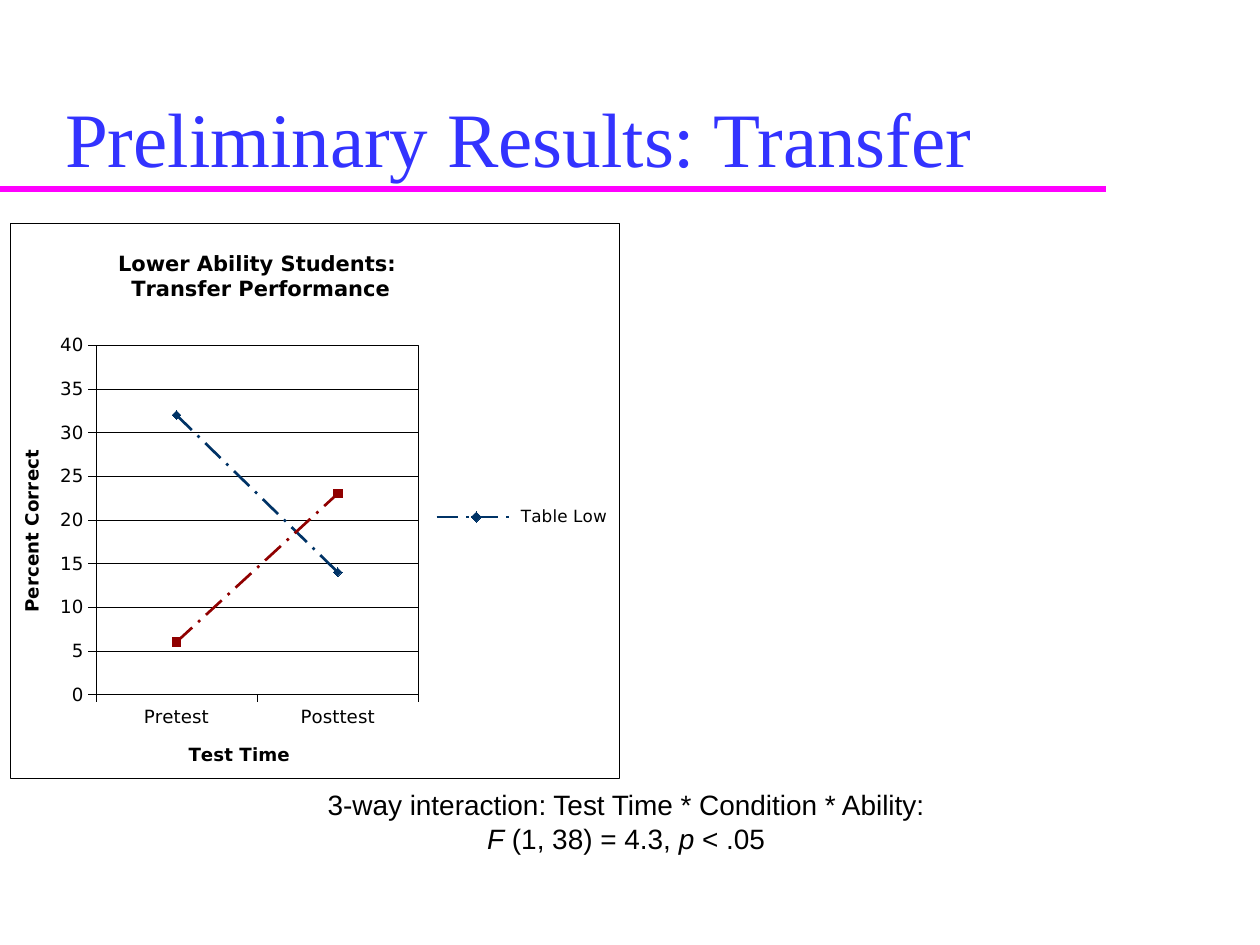
from lxml.etree import SubElement
from pptx import Presentation
from pptx.chart.data import CategoryChartData
from pptx.dml.color import RGBColor
from pptx.enum.chart import (XL_CHART_TYPE as CT, XL_LEGEND_POSITION as LP,
                             XL_MARKER_STYLE as MS, XL_TICK_MARK as TM)
from pptx.enum.dml import MSO_LINE
from pptx.enum.shapes import MSO_CONNECTOR
from pptx.enum.text import MSO_ANCHOR, MSO_AUTO_SIZE, PP_ALIGN
from pptx.oxml import parse_xml
from pptx.oxml.ns import nsdecls, qn
from pptx.util import Pt

SERIES = [("Table Low", (32, 14), "003366", MS.DIAMOND),
          ("Diagram Low", (6, 23), "900000", MS.SQUARE)]
HAIR = 0.19


def rgb(value):
    """Turn a hex string into a colour."""
    return RGBColor.from_string(value)


def set_font(font, size, name="DejaVu Sans", color="000000", **extra):
    """Apply size, face, colour and further values to a font."""
    for key, value in {"size": Pt(size), "name": name, **extra}.items():
        setattr(font, key, value)
    font.color.rgb = rgb(color)


def set_line(line, color, width):
    """Give a line its colour and width."""
    line.color.rgb = rgb(color)
    line.width = Pt(width)


def set_layout(parent, after=None, **values):
    """Put a manual layout in a chart part, after the named child or first."""
    for old in parent.findall(qn("c:layout")):
        parent.remove(old)
    layout = parse_xml(f"<c:layout {nsdecls('c')}/>")
    manual = SubElement(layout, qn("c:manualLayout"))
    for key, value in values.items():
        SubElement(manual, qn(f"c:{key}")).set("val", str(value))
    if after:
        parent.find(qn(after)).addnext(layout)
    else:
        parent.insert(0, layout)


def framed_fill():
    """Make chart shape properties with white fill and a hairline border."""
    return parse_xml(
        f'<c:spPr {nsdecls("c", "a")}><a:solidFill><a:srgbClr val="FFFFFF"/></a:solidFill>'
        f'<a:ln w="{Pt(HAIR)}"><a:solidFill><a:srgbClr val="000000"/></a:solidFill></a:ln></c:spPr>')


def add_heading(slide, text, x, y, w, h):
    """Place the slide title and the rule beneath it."""
    sp = slide.shapes.title
    sp.left, sp.top, sp.width, sp.height = map(Pt, (x, y, w, h))
    tf = sp.text_frame
    tf.text = text
    tf.auto_size = MSO_AUTO_SIZE.NONE
    tf.vertical_anchor = MSO_ANCHOR.BOTTOM
    p = tf.paragraphs[0]
    p.alignment = PP_ALIGN.LEFT
    set_font(p.runs[0].font, 44, "Times New Roman", "3333FF")
    rule = slide.shapes.add_connector(MSO_CONNECTOR.STRAIGHT, 0, Pt(y + h), Pt(632), Pt(y + h))
    set_line(rule.line, "FF00FF", 4)
    SubElement(rule._element.spPr, qn("a:effectLst"))


def format_axis(axis, title):
    """Format an axis with its title, ticks and hairline."""
    tf = axis.axis_title.text_frame
    tf.text = title
    set_font(tf.paragraphs[0].runs[0].font, 10.4, bold=True)
    set_font(axis.tick_labels.font, 10.4)
    set_line(axis.format.line, "000000", HAIR)
    axis.major_tick_mark = TM.OUTSIDE
    axis.minor_tick_mark = TM.NONE


def add_legend(chart):
    """Show a legend at the right for the first series only."""
    chart.has_legend = True
    legend = chart.legend
    legend.position = LP.RIGHT
    legend.include_in_layout = False
    set_font(legend.font, 9.6)
    root = legend._element
    set_layout(root, "c:legendPos", xMode="edge", yMode="edge", x=0.69, y=0.5, w=0.3, h=0.06)
    root.find(qn("c:legendPos")).addnext(parse_xml(
        f'<c:legendEntry {nsdecls("c")}><c:idx val="1"/><c:delete val="1"/></c:legendEntry>'))


def add_line_chart(slide, x, y, w, h):
    """Place the transfer performance line chart."""
    data = CategoryChartData()
    data.categories = ["Pretest", "Posttest"]
    for name, values, *_ in SERIES:
        data.add_series(name, values)
    chart = slide.shapes.add_chart(CT.LINE_MARKERS, *map(Pt, (x, y, w, h)), data).chart
    set_font(chart.font, 6.1)

    tf = chart.chart_title.text_frame
    tf.text = "Lower Ability Students: \nTransfer Performance"
    for p in tf.paragraphs:
        set_font(p.runs[0].font, 12, bold=True)
    set_layout(chart.chart_title._element, "c:tx", xMode="edge", yMode="edge", x=0.17, y=0.04)

    format_axis(chart.category_axis, "Test Time")
    axis = chart.value_axis
    format_axis(axis, "Percent Correct")
    axis.minimum_scale, axis.maximum_scale, axis.major_unit = 0, 40, 5
    set_line(axis.major_gridlines.format.line, "000000", HAIR)
    add_legend(chart)

    chart.plots[0].vary_by_categories = False
    for s, (_, _, color, style) in zip(chart.plots[0].series, SERIES):
        s.smooth = False
        set_line(s.format.line, color, 1.52)
        s.format.line.dash_style = MSO_LINE.LONG_DASH_DOT
        s.marker.style, s.marker.size = style, 5
        s.marker.format.fill.solid()
        s.marker.format.fill.fore_color.rgb = rgb(color)
        set_line(s.marker.format.line, color, 0.75)

    root = chart._chartSpace
    area = root.chart.plotArea
    set_layout(area, layoutTarget="inner", xMode="edge", yMode="edge",
               x=0.14, y=0.22, w=0.53, h=0.63)
    area.append(framed_fill())
    root.chart.addnext(framed_fill())


def add_statistics(slide, x, y, w, h):
    """Place the centred test result."""
    tf = slide.shapes.add_textbox(*map(Pt, (x, y, w, h))).text_frame
    tf.word_wrap = True
    tf.auto_size = MSO_AUTO_SIZE.SHAPE_TO_FIT_TEXT
    lines = [[("3-way interaction: Test Time * Condition * Ability: ", False)],
             [("F", True), (" (1, 38) = 4.3, ", False), ("p", True), (" < .05 ", False)]]
    for i, runs in enumerate(lines):
        p = tf.add_paragraph() if i else tf.paragraphs[0]
        p.alignment = PP_ALIGN.CENTER
        for text, italic in runs:
            r = p.add_run()
            r.text = text
            set_font(r.font, 16, "Arial", italic=italic)


def main():
    """Build the slide and save it."""
    prs = Presentation()
    prs.slide_width, prs.slide_height = Pt(720), Pt(540)
    slide = prs.slides.add_slide(prs.slide_layouts[5])
    add_heading(slide, "Preliminary Results: Transfer", 30, 21, 612, 87)
    add_line_chart(slide, 6, 127.5, 348, 317)
    add_statistics(slide, 153, 446.5, 414, 46)
    prs.save("out.pptx")


if __name__ == "__main__":
    main()
